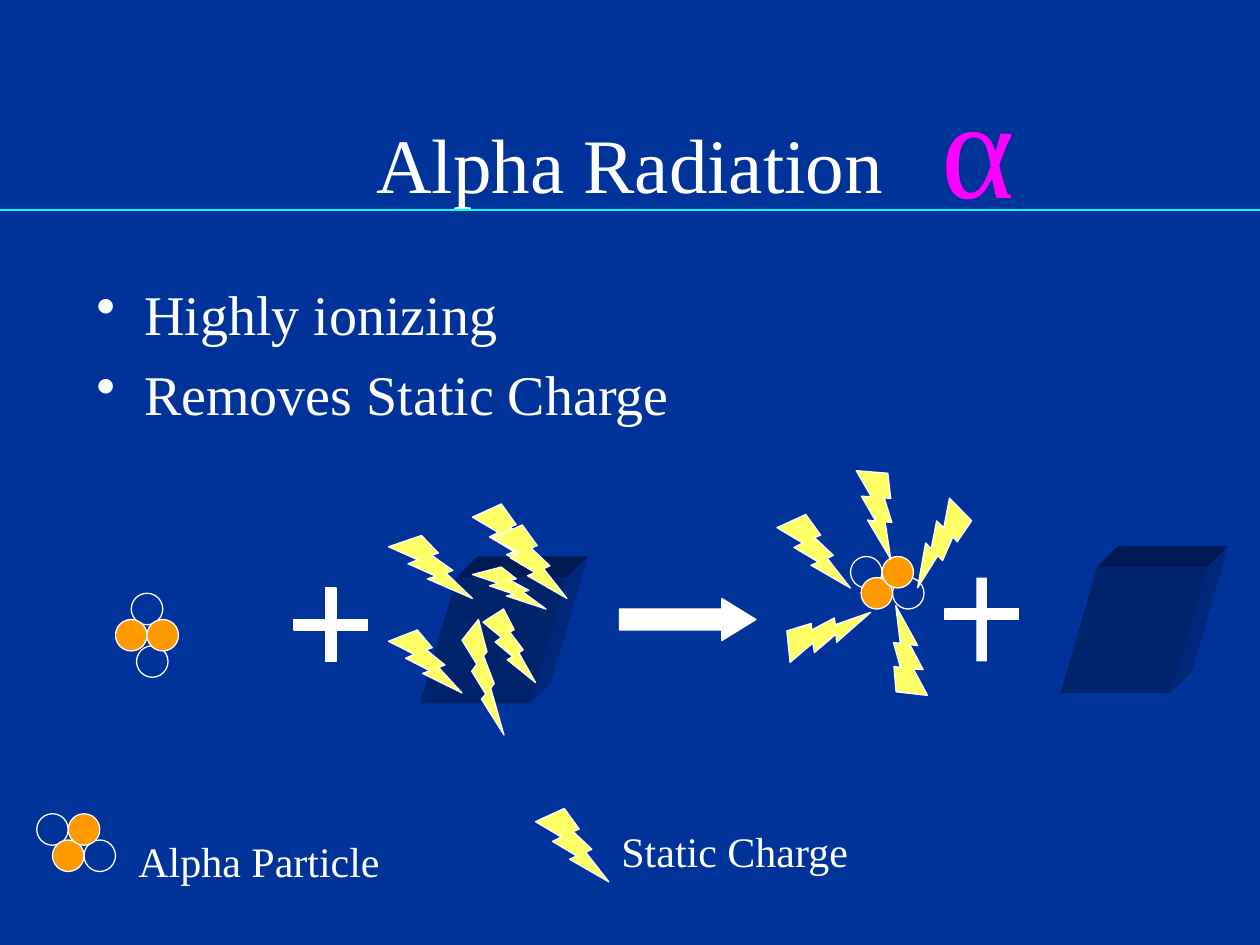
from lxml import etree
from pptx import Presentation
from pptx import util as u
from pptx.dml import color
from pptx.enum import shapes, text
from pptx.oxml import ns

UNIT = u.Inches(1) / 24
SHAPE = shapes.MSO_SHAPE
NAVY, WHITE, YELLOW, ORANGE = "003399", "FFFFFF", "FFFF66", "FF9900"
CYAN, MAGENTA = "00FFFF", "FF00FF"
FACE, TOP, SIDE = "00246B", "001B54", "00287A"


def grid(*values):
    return [u.Emu(round(value * UNIT)) for value in values]


def paint(target, value):
    if value is None:
        target.background()
    else:
        target.solid()
        target.fore_color.rgb = color.RGBColor.from_string(value)


def style(shape, fill, line):
    shape.shadow.inherit = False
    paint(shape.fill, fill)
    paint(shape.line.fill, line)
    if line:
        shape.line.width = u.Pt(0.75)


def add_figure(slide, kind, box, fill=None, line=WHITE, rotation=0, adjustments=()):
    shape = slide.shapes.add_shape(kind, *grid(*box))
    style(shape, fill, line)
    shape.rotation = rotation
    for index, value in enumerate(adjustments):
        shape.adjustments[index] = value
    return shape


def add_particle(slide, protons, neutrons):
    for centers, fill in ((neutrons, None), (protons, ORANGE)):
        for left, top in centers:
            add_figure(slide, SHAPE.OVAL, (left, top, 6, 6), fill)


def add_bolts(slide, bolts):
    for left, top, width, height, rotation in bolts:
        add_figure(slide, SHAPE.LIGHTNING_BOLT, (left, top, width, height), YELLOW, rotation=rotation)


def add_plus(slide, upright, crossbar, upright_line=WHITE):
    add_figure(slide, SHAPE.RECTANGLE, upright, WHITE, upright_line)
    add_figure(slide, SHAPE.RECTANGLE, crossbar, WHITE)


def add_face(slide, points, fill):
    builder = slide.shapes.build_freeform(*points[0], scale=UNIT)
    builder.add_line_segments(points[1:], close=True)
    style(builder.convert_to_shape(), fill, None)


def add_block(slide, left, top, width=28, height=24, slant=7, depth=4):
    right, bottom = left + width, top + height
    back_right, back_top = right + depth, top - depth
    add_face(slide, [(left + slant, top), (left + slant + depth, back_top),
                     (back_right, back_top), (right, top)], TOP)
    add_face(slide, [(right, top), (back_right, back_top),
                     (back_right - slant, bottom - depth), (right - slant, bottom)], SIDE)
    add_figure(slide, SHAPE.PARALLELOGRAM, (left, top, width, height), FACE, None,
               adjustments=[slant / height])


def add_rule(slide, top):
    rule = slide.shapes.add_connector(shapes.MSO_CONNECTOR.STRAIGHT, *grid(0, top, 240, top))
    paint(rule.line.fill, CYAN)
    rule.line.width = u.Pt(0.75)
    etree.SubElement(rule._element.spPr, ns.qn("a:effectLst"))


def set_bullet(paragraph):
    properties = paragraph._p.get_or_add_pPr()
    properties.set("marL", str(u.Inches(0.38)))
    properties.set("indent", str(-u.Inches(0.38)))
    etree.SubElement(properties, ns.qn("a:buChar"), char="•")


def write_text(shape, lines, size, fill=WHITE, before=(), bullets=False,
               align=text.PP_ALIGN.LEFT, anchor=text.MSO_ANCHOR.TOP):
    frame = shape.text_frame
    frame.word_wrap = True
    frame.auto_size = text.MSO_AUTO_SIZE.NONE
    frame.vertical_anchor = anchor
    frame.text = "\n".join(lines)
    for index, paragraph in enumerate(frame.paragraphs):
        paragraph.alignment = align
        paragraph.space_before = u.Pt(before[index] if before else 0)
        font = paragraph.runs[0].font
        font.name, font.size = "Times New Roman", u.Pt(size)
        paint(font.fill, fill)
        if bullets:
            set_bullet(paragraph)


def add_text(slide, box, lines, size, **options):
    write_text(slide.shapes.add_textbox(*grid(*box)), lines, size, **options)


def add_title(slide, box, line):
    title = slide.shapes.title
    title.left, title.top, title.width, title.height = grid(*box)
    write_text(title, [line], 44, align=text.PP_ALIGN.CENTER, anchor=text.MSO_ANCHOR.MIDDLE)


def main():
    presentation = Presentation()
    presentation.slide_width, presentation.slide_height = grid(240, 180)
    slide = presentation.slides.add_slide(presentation.slide_layouts[5])
    paint(slide.background.fill, NAVY)

    add_title(slide, (18, 16, 204, 30), "Alpha Radiation")
    add_rule(slide, 40)
    add_text(slide, (16, 52, 204, 38), ["Highly ionizing", "Removes Static Charge"], 32,
             before=(3.2, 7.4), bullets=True)

    add_particle(slide, protons=[(22, 118), (28, 118)], neutrons=[(26, 123), (25, 113)])
    add_plus(slide, (62, 112, 2, 14), (56, 118, 14, 2))
    add_block(slide, 80, 110)
    add_bolts(slide, [
        (74, 102, 16, 12, 0), (90, 108, 14, 8, 0), (88, 118, 8, 22, 0),
        (74, 120, 14, 12, 0), (92, 116, 10, 14, 0), (90, 96, 14, 14, 0),
        (94, 100, 14, 14, 0),
    ])

    add_figure(slide, SHAPE.RIGHT_ARROW, (118, 114, 26, 8), WHITE, adjustments=[0.5, 0.81])

    add_particle(slide, protons=[(164, 110), (168, 106)], neutrons=[(162, 106), (170, 110)])
    add_block(slide, 202, 108)
    add_bolts(slide, [
        (166, 118, 14, 14, 211.1), (150, 114, 14, 14, 288.8), (160, 90, 14, 14, 29.3),
        (148, 98, 14, 14, 0), (172, 96, 14, 14, 70.2),
    ])

    add_bolts(slide, [(102, 154, 14, 14, 0)])
    add_particle(slide, protons=[(10, 160), (13, 155)], neutrons=[(7, 155), (16, 160)])
    add_text(slide, (116, 156, 64, 12), ["Static Charge"], 24, before=[2.4])
    add_text(slide, (24, 158, 68, 12), ["Alpha Particle"], 24, before=[2.4])
    add_text(slide, (177, 10, 18, 34.3), ["α"], 80, fill=MAGENTA, before=[8])
    add_plus(slide, (186, 110, 2, 16), (180, 116, 14, 2), upright_line=None)

    presentation.save("out.pptx")


if __name__ == "__main__":
    main()
